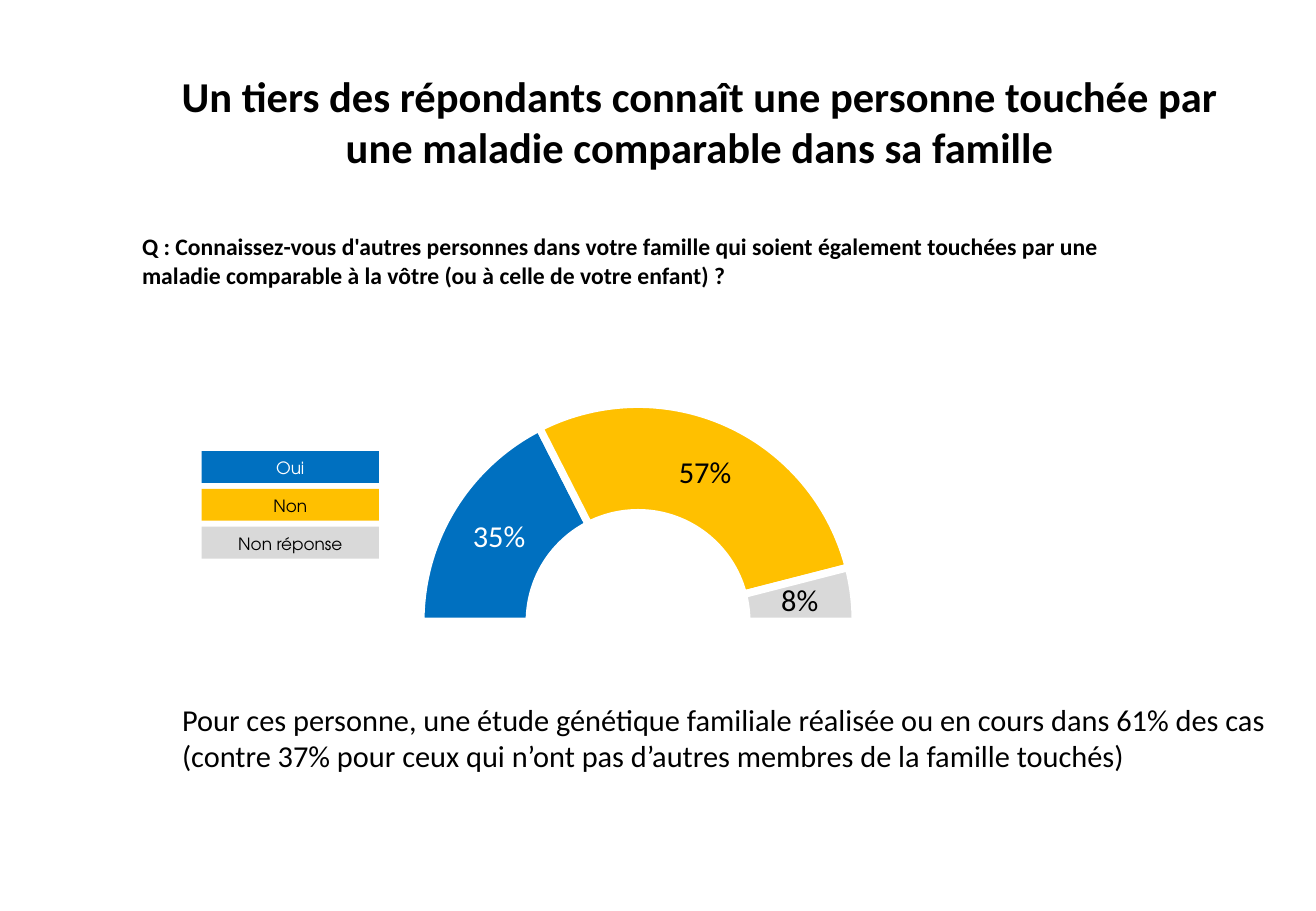
from lxml import etree
from pptx import Presentation
from pptx.chart import data as chart_data
from pptx.dml import color
from pptx.enum import chart as chart_enum, shapes, text
from pptx.oxml import ns
from pptx.util import Pt

COLORS = {"black": "000000", "white": "FFFFFF", "blue": "0070C0",
          "amber": "FFC000", "grey": "D9D9D9"}
ANSWERS = [("Oui", 0.35, "blue", "white"),
           ("Non", 0.57, "amber", "black"),
           ("Non réponse", 0.08, "grey", "black")]
PLOT_LAYOUT = {"layoutTarget": "inner", "xMode": "edge", "yMode": "edge",
               "x": 0.06, "y": 0.09, "w": 0.84, "h": 0.79}


def rgb(name):
    return color.RGBColor.from_string(COLORS[name])


def set_font(font, color_name="black", **formats):
    for name, value in {"name": "Calibri", "bold": False, **formats}.items():
        setattr(font, name, value)
    font.color.rgb = rgb(color_name)


def place(shape, box):
    for name, value in zip(("left", "top", "width", "height"), box):
        setattr(shape, name, Pt(value))


def add_title(slide, box):
    title = slide.shapes.title
    place(title, box)
    frame = title.text_frame
    frame.text = ("Un tiers des répondants connaît une personne touchée par "
                  "une maladie comparable dans sa famille")
    frame.auto_size = text.MSO_AUTO_SIZE.NONE
    frame.vertical_anchor = text.MSO_ANCHOR.MIDDLE
    paragraph = frame.paragraphs[0]
    paragraph.alignment = text.PP_ALIGN.CENTER
    set_font(paragraph.font, size=Pt(25.2), bold=True)


def add_question(slide, box):
    question = slide.placeholders[1]
    place(question, box)
    frame = question.text_frame
    frame.text = ("Q : Connaissez-vous d'autres personnes dans votre famille "
                  "qui soient également touchées par une maladie comparable "
                  "à la vôtre (ou à celle de votre enfant) ?")
    frame.auto_size = text.MSO_AUTO_SIZE.NONE
    paragraph = frame.paragraphs[0]
    paragraph.space_before = Pt(0)
    properties = paragraph._p.get_or_add_pPr()
    properties.set("marL", "0")
    properties.set("indent", "0")
    etree.SubElement(properties, ns.qn("a:buNone"))
    set_font(paragraph.font, size=Pt(14), bold=True)


def set_plot_layout(chart):
    plot_area = chart.element.find(".//" + ns.qn("c:plotArea"))
    layout = plot_area.find(ns.qn("c:layout"))
    if layout is None:
        layout = etree.Element(ns.qn("c:layout"))
        plot_area.insert(0, layout)
    manual = etree.SubElement(layout, ns.qn("c:manualLayout"))
    for name, value in PLOT_LAYOUT.items():
        etree.SubElement(manual, ns.qn("c:" + name)).set("val", str(value))


def set_ring(chart, start_angle, hole_size):
    ring = chart.element.find(".//" + ns.qn("c:doughnutChart"))
    for name, value in (("firstSliceAng", start_angle), ("holeSize", hole_size)):
        ring.find(ns.qn("c:" + name)).set("val", str(value))


def hide_half(series, index):
    point = series.points[index]
    point.format.fill.background()
    point.format.line.fill.background()
    set_font(point.data_label.font)
    label = series.data_labels._element.findall(ns.qn("c:dLbl"))[-1]
    for child in list(label)[1:]:
        label.remove(child)
    etree.SubElement(label, ns.qn("c:delete")).set("val", "1")


def add_half_ring(slide, box):
    data = chart_data.CategoryChartData(number_format="0%")
    data.categories = ["1", "2", "3", "4"]
    data.add_series("Series 1", [answer[1] for answer in ANSWERS] + [1])
    chart = slide.shapes.add_chart(chart_enum.XL_CHART_TYPE.DOUGHNUT,
                                   *map(Pt, box), data).chart
    chart.has_legend = False
    chart.has_title = False
    set_font(chart.font, size=Pt(18))
    set_plot_layout(chart)
    set_ring(chart, 270, 61)
    series = chart.plots[0].series[0]
    labels = series.data_labels
    for name, value in {"show_value": True, "show_percentage": False,
                        "number_format": "0%",
                        "number_format_is_linked": False}.items():
        setattr(labels, name, value)
    set_font(labels.font, size=Pt(18))
    for index, (_, _, fill, font_color) in enumerate(ANSWERS):
        point = series.points[index]
        point.format.fill.solid()
        point.format.fill.fore_color.rgb = rgb(fill)
        point.format.line.color.rgb = rgb("white")
        point.format.line.width = Pt(4.5)
        set_font(point.data_label.font, font_color, size=Pt(18))
    hide_half(series, len(ANSWERS))


def add_legend(slide, box):
    left, top, width, height = box
    key_height = 18.9
    pitch = (height - key_height) / (len(ANSWERS) - 1)
    for index, (answer, _, fill, font_color) in enumerate(ANSWERS):
        key = slide.shapes.add_shape(
            shapes.MSO_SHAPE.RECTANGLE, Pt(left), Pt(top + index * pitch),
            Pt(width), Pt(key_height))
        key.shadow.inherit = False
        key.fill.solid()
        key.fill.fore_color.rgb = rgb(fill)
        key.line.fill.background()
        frame = key.text_frame
        for side in ("left", "top", "right", "bottom"):
            setattr(frame, "margin_" + side, Pt(2.9))
        frame.vertical_anchor = text.MSO_ANCHOR.MIDDLE
        frame.text = answer
        paragraph = frame.paragraphs[0]
        paragraph.alignment = text.PP_ALIGN.CENTER
        paragraph.line_spacing = Pt(13)
        set_font(paragraph.font, font_color, name="TeX Gyre Adventor", size=Pt(10))


def add_conclusion(slide, box):
    frame = slide.shapes.add_textbox(*map(Pt, box)).text_frame
    frame.word_wrap = False
    frame.text = ("Pour ces personne, une étude génétique familiale réalisée "
                  "ou en cours dans 61% des cas\n"
                  "(contre 37% pour ceux qui n’ont pas d’autres membres de la "
                  "famille touchés)")
    for paragraph in frame.paragraphs:
        set_font(paragraph.font, size=Pt(18))


def main():
    presentation = Presentation()
    presentation.slide_width = Pt(780)
    presentation.slide_height = Pt(540)
    slide = presentation.slides.add_slide(presentation.slide_layouts[1])
    add_title(slide, (78.5, 49.7, 672.5, 44.6))
    add_question(slide, (77, 134, 607, 33.8))
    add_half_ring(slide, (231, 210.2, 306.7, 326.2))
    add_legend(slide, (119.5, 267.4, 105.1, 63.7))
    add_conclusion(slide, (100.8, 411.8, 668.9, 51.1))
    presentation.save("out.pptx")


if __name__ == "__main__":
    main()
